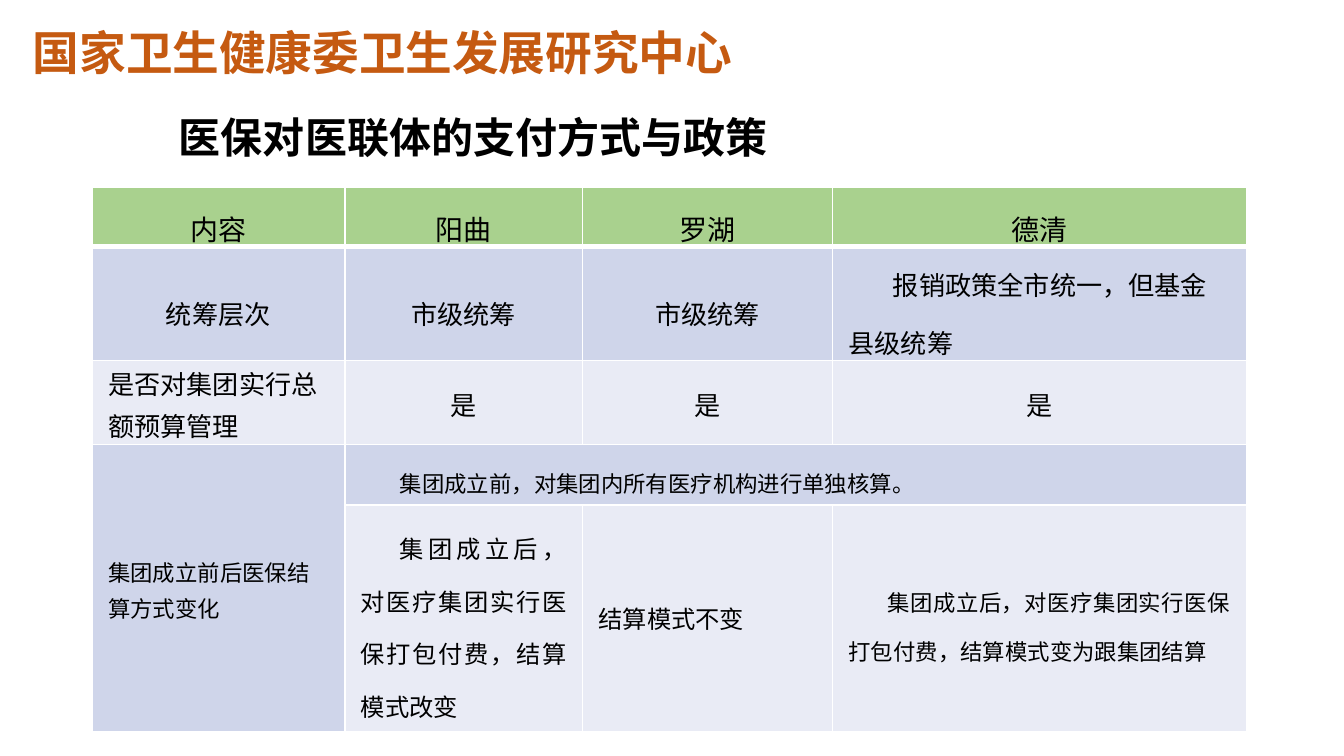
from dataclasses import dataclass

from lxml.etree import Element, SubElement
from pptx import Presentation
from pptx.dml.color import RGBColor
from pptx.enum.text import MSO_ANCHOR as Anchor, MSO_AUTO_SIZE as Fit, PP_ALIGN as Align
from pptx.oxml.ns import qn
from pptx.util import Inches, Pt

WIDE = Inches(10)
HIGH = WIDE * 9 // 16
HEX = {"ink": "000000", "rust": "C55A11", "white": "FFFFFF",
       "head": "A9D18E", "dark": "CFD5EA", "pale": "E9EBF5"}
CJK = "Noto Sans CJK SC"
COLS = (18.8, 17.7, 18.6, 30.8)       # percent of slide width
ROWS = (7.8, 15.1, 11.1, 8, 30)       # percent of slide height


@dataclass
class Cell:
    row: int
    col: int
    text: str
    fill: str
    size: float = 14
    align: Align = Align.CENTER
    lead: float = 1.5
    indent: float = 0
    down: int = 1
    across: int = 1


CELLS = [
    *(Cell(0, i, t, "head", 15) for i, t in enumerate(("内容", "阳曲", "罗湖", "德清"))),
    *(Cell(1, i, t, "dark") for i, t in enumerate(("统筹层次", "市级统筹", "市级统筹"))),
    Cell(1, 3, "报销政策全市统一，但基金县级统筹", "dark", align=Align.LEFT, indent=0.33),
    Cell(2, 0, "是否对集团实行总额预算管理", "pale", align=Align.LEFT, lead=1.1),
    *(Cell(2, i, "是", "pale", lead=1.1) for i in (1, 2, 3)),
    Cell(3, 0, "集团成立前后医保结算方式变化", "dark", 12, Align.LEFT, 1.1, down=2),
    Cell(3, 1, "集团成立前，对集团内所有医疗机构进行单独核算。", "dark", 12,
         Align.JUSTIFY, indent=0.29, across=3),
    Cell(4, 1, "集团成立后，对医疗集团实行医保打包付费，结算模式改变", "pale", 13,
         Align.JUSTIFY, indent=0.29),
    Cell(4, 2, "结算模式不变", "pale", 13, Align.LEFT, 1),
    Cell(4, 3, "集团成立后，对医疗集团实行医保打包付费，结算模式变为跟集团结算", "pale", 12,
         Align.JUSTIFY, indent=0.29),
]


def across(share: float) -> int:
    return round(WIDE * share / 100)


def down(share: float) -> int:
    return round(HIGH * share / 100)


def box(x: float, y: float, w: float, h: float) -> tuple[int, int, int, int]:
    """Turn percentages of the slide into a left, top, width and height."""
    return across(x), down(y), across(w), down(h)


def write(frame, text: str, size: float, color: str, face: str, bold: bool = False,
          align: Align = Align.LEFT, lead: float = 1) -> None:
    frame.text = text
    frame.word_wrap = True
    para = frame.paragraphs[0]
    para.alignment, para.line_spacing = align, lead
    for run in para.runs:
        font = run.font
        font.size, font.bold, font.name = Pt(size), bold, face
        font.color.rgb = RGBColor.from_string(HEX[color])
        SubElement(font._element, qn("a:ea")).set("typeface", CJK)


def pad(frame, left: float = 0.14) -> None:
    frame.margin_left, frame.margin_right = Inches(left), Inches(0.14)
    frame.margin_top = frame.margin_bottom = Inches(0.07)


def paint(part, color: str) -> None:
    part.fill.solid()
    part.fill.fore_color.rgb = RGBColor.from_string(HEX[color])


def rule(cell, head: bool) -> None:
    """Give a cell white borders, with a thick one under the header."""
    props = cell._tc.get_or_add_tcPr()
    for spot, side in enumerate("LRTB"):
        thick = head and side == "B"
        line = Element(qn(f"a:ln{side}"), w=str(Pt(3 if thick else 1)))
        fill = SubElement(line, qn("a:solidFill"))
        SubElement(fill, qn("a:srgbClr"), val=HEX["white"])
        props.insert(spot, line)


def draw(table, item: Cell) -> None:
    cell = table.cell(item.row, item.col)
    if item.down * item.across > 1:
        cell.merge(table.cell(item.row + item.down - 1, item.col + item.across - 1))
    paint(cell, item.fill)
    if item.row == 0:
        rule(cell, True)
    elif item.row == 1:
        rule(cell, False)
        top = cell._tc.tcPr.find(qn("a:lnT"))
        top.set("w", str(Pt(3)))
    else:
        rule(cell, False)
    cell.vertical_anchor = Anchor.MIDDLE
    cell.margin_left = cell.margin_right = Inches(0.12)
    cell.margin_top = cell.margin_bottom = 0
    write(cell.text_frame, item.text, item.size, "ink", "Arial",
          align=item.align, lead=item.lead)
    if item.indent:
        props = cell.text_frame.paragraphs[0]._p.get_or_add_pPr()
        props.set("indent", str(Inches(item.indent)))


def main() -> None:
    deck = Presentation()
    deck.slide_width, deck.slide_height = WIDE, HIGH
    slide = deck.slides.add_slide(deck.slide_layouts[5])

    title = slide.shapes.title
    title.left, title.top, title.width, title.height = box(6.9, 11.9, 86.2, 11)
    frame = title.text_frame
    frame.auto_size, frame.vertical_anchor = Fit.NONE, Anchor.MIDDLE
    pad(frame, 0.64)
    write(frame, "医保对医联体的支付方式与政策", 22.5, "ink", CJK, True, lead=1.2)

    banner = slide.shapes.add_textbox(*box(1.05, 1.9, 62, 10))
    paint(banner, "white")
    pad(banner.text_frame)
    banner.text_frame.auto_size = Fit.SHAPE_TO_FIT_TEXT
    write(banner.text_frame, "国家卫生健康委卫生发展研究中心", 25, "rust", "Calibri", True)

    grid = slide.shapes.add_table(len(ROWS), len(COLS),
                                  *box(6.85, 24.8, sum(COLS), sum(ROWS))).table
    for col, share in zip(grid.columns, COLS):
        col.width = across(share)
    for row, share in zip(grid.rows, ROWS):
        row.height = down(share)
    for item in CELLS:
        draw(grid, item)

    deck.save("out.pptx")


if __name__ == "__main__":
    main()
